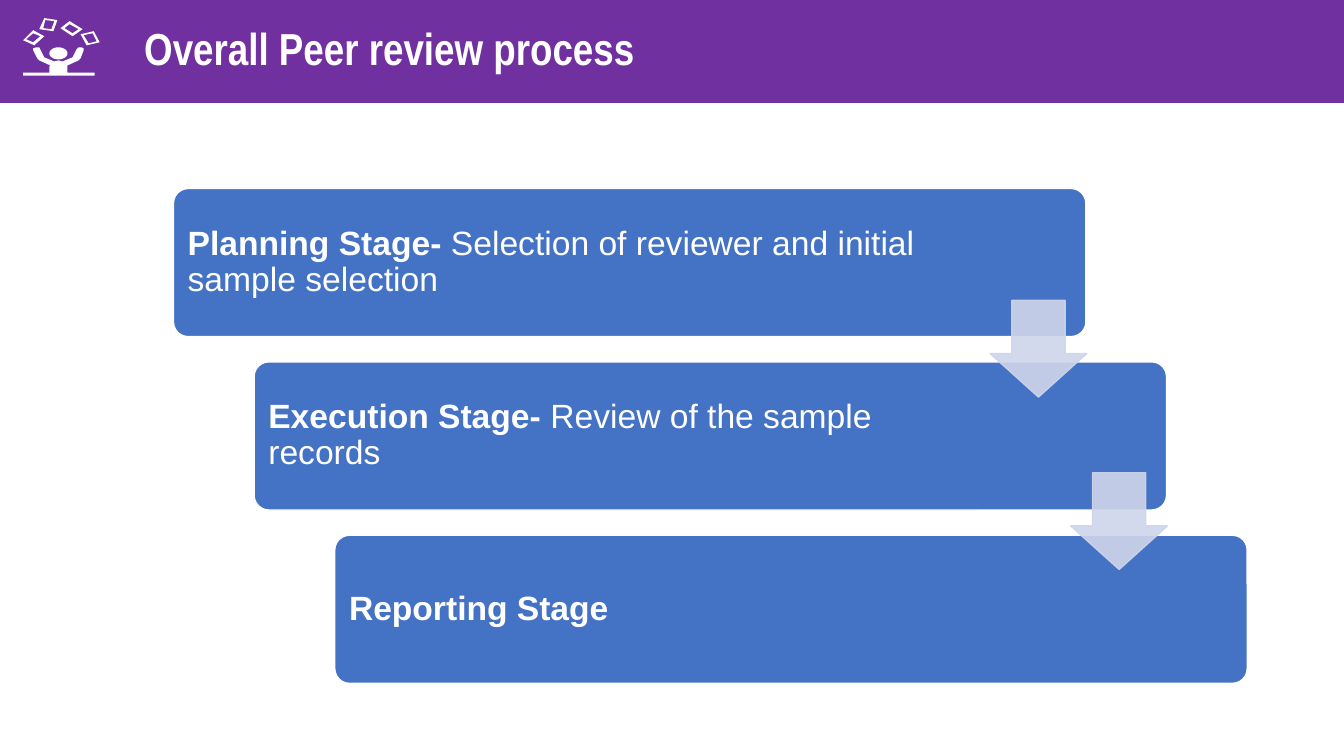
import math

from lxml import etree
from pptx import Presentation
from pptx.dml.color import RGBColor
from pptx.enum.shapes import MSO_SHAPE
from pptx.enum.text import MSO_ANCHOR, MSO_AUTO_SIZE, PP_ALIGN
from pptx.oxml.ns import qn
from pptx.util import Inches, Pt

ROUNDED, DOWN_ARROW = MSO_SHAPE.ROUNDED_RECTANGLE, MSO_SHAPE.DOWN_ARROW
MIDDLE, LEFT = MSO_ANCHOR.MIDDLE, PP_ALIGN.LEFT
COLORS = {"band": "7030A0", "step": "4472C4", "arrow": "CFD5EA", "white": "FFFFFF"}


def add_run(p, text, size=24, font="Arial", bold=False, color="white"):
    r = p.add_run()
    r.text = text
    r.font.size, r.font.name, r.font.bold = Pt(size), font, bold
    r.font.color.rgb = RGBColor.from_string(COLORS[color])


def paint(shape, fill, line=None, width=1):
    shape.fill.solid()
    shape.fill.fore_color.rgb = RGBColor.from_string(COLORS[fill])
    if line:
        shape.line.color.rgb = RGBColor.from_string(COLORS[line])
        shape.line.width = Pt(width)
    else:
        shape.line.fill.background()


prs = Presentation()
prs.slide_width, prs.slide_height = Inches(13.33), Inches(7.5)
s = prs.slides.add_slide(prs.slide_layouts[5])

# Title band
title = s.shapes.title
title.left, title.top = Inches(-0.04), Inches(-0.08)
title.width, title.height = Inches(13.37), Inches(1.11)
paint(title, "band", "white", 0.5)
tf = title.text_frame
tf.auto_size, tf.vertical_anchor = MSO_AUTO_SIZE.NONE, MIDDLE
tf.margin_left = Inches(1.47)
p = tf.paragraphs[0]
p.alignment = LEFT
add_run(p, "Overall Peer review process", size=32, font="Arial Narrow", bold=True)

# Icon: a person at a desk below four flying sheets, in hundredths of an inch
sheets = [
    [(33, 30), (44, 36), (34, 45), (23, 40)], [(33, 33), (26, 39), (33, 42), (40, 36)],
    [(69, 21), (60, 28), (72, 36), (82, 29)], [(69, 24), (78, 29), (72, 33), (64, 28)],
    [(57, 20), (44, 18), (39, 29), (53, 31)], [(54, 21), (51, 29), (43, 28), (45, 20)],
    [(93, 31), (99, 42), (86, 45), (80, 34)], [(92, 33), (83, 35), (88, 43), (96, 41)],
]
head = [(58 + 9 * math.cos(math.radians(a)), 53 + 6 * math.sin(math.radians(a)))
        for a in range(0, 360, 15)]
body = [
    (58, 60), (54, 61), (44, 57), (40, 49), (39, 47), (36, 47), (33, 48), (33, 50),
    (37, 58), (39, 60), (50, 65), (49, 66), (49, 72), (23, 72), (23, 75), (94, 75),
    (94, 72), (67, 72), (67, 65), (78, 60), (80, 58), (83, 50), (83, 48), (81, 47),
    (78, 47), (76, 49), (72, 57), (62, 61),
]
outlines = [[(10 * x, 10 * y) for x, y in points] for points in sheets + [head, body]]
builder = s.shapes.build_freeform(*outlines[0][0], scale=Inches(1) / 1000)
for i, points in enumerate(outlines):
    if i:
        builder.move_to(*points[0])
    builder.add_line_segments(points[1:], close=True)
icon = builder.convert_to_shape()
icon.shadow.inherit = False
paint(icon, "white")

# Staggered steps
steps = [
    ("Planning Stage- ", "Selection of reviewer and initial sample selection", 1.61),
    ("Execution Stage-", " Review of the sample records", 1.86),
    ("Reporting Stage", "", 1.86),
]
for i, (stage, detail, right_margin) in enumerate(steps):
    step = s.shapes.add_shape(ROUNDED, Inches(1.72 + 0.8 * i), Inches(1.87 + 1.72 * i),
                              Inches(9.05), Inches(1.47))
    step.adjustments[0] = 0.1
    step.shadow.inherit = False
    paint(step, "step", "white")
    tf = step.text_frame
    tf.word_wrap, tf.vertical_anchor = True, MIDDLE
    tf.margin_left = tf.margin_top = tf.margin_bottom = Inches(0.1)
    tf.margin_right = Inches(right_margin)
    p = tf.paragraphs[0]
    p.alignment, p.line_spacing = LEFT, 0.9
    add_run(p, stage, bold=True)
    if detail:
        add_run(p, detail)

# Arrows from each step to the next
for i in range(len(steps) - 1):
    arrow = s.shapes.add_shape(DOWN_ARROW, Inches(9.82 + 0.8 * i), Inches(2.98 + 1.71 * i),
                               Inches(0.96), Inches(0.96))
    arrow.adjustments[0], arrow.adjustments[1] = 0.55, 0.45
    arrow.shadow.inherit = False
    paint(arrow, "arrow", "arrow")
    for color in arrow.element.spPr.iter(qn("a:srgbClr")):
        etree.SubElement(color, qn("a:alpha")).set("val", "90000")

prs.save("out.pptx")
